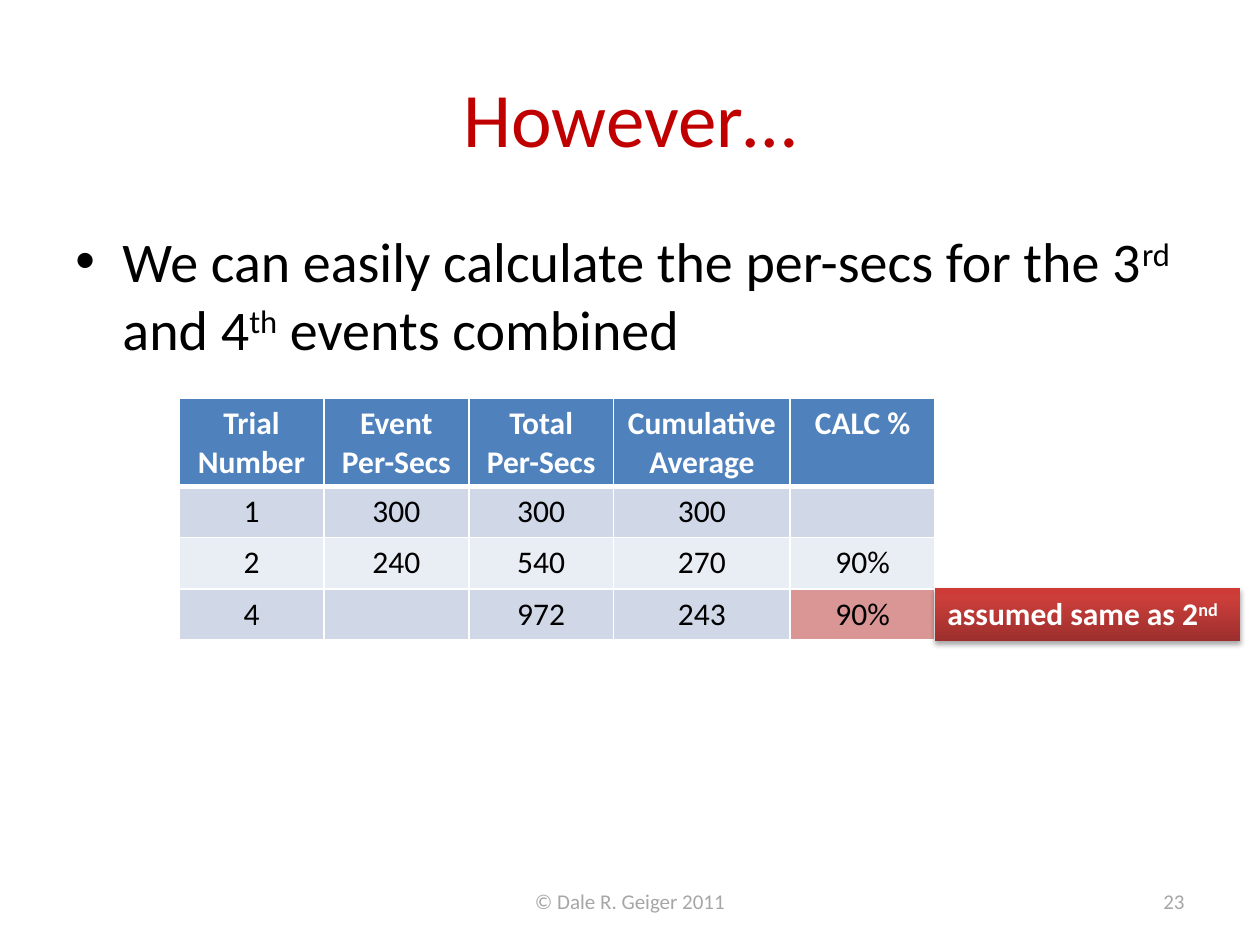
from copy import deepcopy

from lxml import etree
from pptx import Presentation
from pptx.dml.color import RGBColor
from pptx.enum.shapes import MSO_SHAPE
from pptx.enum.text import MSO_ANCHOR, MSO_AUTO_SIZE, PP_ALIGN
from pptx.oxml import parse_xml
from pptx.oxml.ns import nsdecls, qn
from pptx.util import Cm, Pt

LEFT, CENTER, RIGHT = PP_ALIGN.LEFT, PP_ALIGN.CENTER, PP_ALIGN.RIGHT
TOP, MIDDLE = MSO_ANCHOR.TOP, MSO_ANCHOR.MIDDLE
RECTANGLE = MSO_SHAPE.RECTANGLE
GROW = MSO_AUTO_SIZE.SHAPE_TO_FIT_TEXT

FONT = "Calibri"
BLACK = RGBColor(0x00, 0x00, 0x00)
WHITE = RGBColor(0xFF, 0xFF, 0xFF)
GRAY = RGBColor(0xA6, 0xA6, 0xA6)
TITLE_RED = RGBColor(0xC0, 0x00, 0x00)
HEADER_BLUE = RGBColor(0x4F, 0x81, 0xBD)
BAND_DARK = RGBColor(0xD0, 0xD8, 0xE8)
BAND_LIGHT = RGBColor(0xE9, 0xED, 0xF4)
HIGHLIGHT = RGBColor(0xD9, 0x96, 0x94)
GRADIENT = [
    (0, RGBColor(0x9C, 0x2F, 0x2D)),
    (0.8, RGBColor(0xCB, 0x3E, 0x3A)),
    (1, RGBColor(0xCE, 0x3B, 0x37)),
]

TRIALS = [
    ["Trial Number", "Event Per-Secs", "Total Per-Secs", "Cumulative Average", "CALC %"],
    ["1", "300", "300", "300", ""],
    ["2", "240", "540", "270", "90%"],
    ["4", "", "972", "243", "90%"],
]
COLUMN_WIDTHS = [2.92, 2.92, 2.92, 3.56, 2.92]
ROW_HEIGHT = 1.03
TABLE_HEIGHT = 4.88


def format_runs(paragraph, size, color, bold=False, align=LEFT):
    paragraph.alignment = align
    for run in paragraph.runs:
        run.font.name = FONT
        run.font.size = Pt(size)
        run.font.bold = bold
        run.font.color.rgb = color


def add_raised_runs(paragraph, pieces):
    """Add the pieces as runs, raising every second one as a superscript."""
    for index, piece in enumerate(pieces):
        run = paragraph.add_run()
        run.text = piece
        if index % 2:
            run.font._element.set("baseline", "30000")


def add_text_box(slide, box, anchor=TOP):
    """Add an empty wrapping text box and return its text frame."""
    text_frame = slide.shapes.add_textbox(*map(Cm, box)).text_frame
    text_frame.word_wrap = True
    text_frame.vertical_anchor = anchor
    return text_frame


def add_label(slide, box, text, size, color, align):
    text_frame = add_text_box(slide, box, MIDDLE)
    text_frame.text = text
    format_runs(text_frame.paragraphs[0], size, color, align=align)


def add_bullet(slide, box, pieces):
    paragraph = add_text_box(slide, box).paragraphs[0]
    add_raised_runs(paragraph, pieces)
    format_runs(paragraph, 32, BLACK)
    paragraph.space_before = Pt(6.4)
    properties = paragraph._p.get_or_add_pPr()
    properties.set("marL", str(Cm(0.95)))
    properties.set("indent", str(Cm(-0.95)))
    etree.SubElement(properties, qn("a:buFont")).set("typeface", "Arial")
    etree.SubElement(properties, qn("a:buChar")).set("char", "•")


def set_borders(cell, top=1, bottom=1):
    properties = cell._tc.get_or_add_tcPr()
    for side, width in (("L", 1), ("R", 1), ("T", top), ("B", bottom)):
        properties.append(parse_xml(
            f'<a:ln{side} {nsdecls("a")} w="{Pt(width)}"><a:solidFill>'
            f'<a:srgbClr val="{WHITE}"/></a:solidFill></a:ln{side}>'))


def add_trial_table(slide, left, top):
    frame = slide.shapes.add_table(
        len(TRIALS), len(COLUMN_WIDTHS), Cm(left), Cm(top),
        Cm(sum(COLUMN_WIDTHS)), Cm(TABLE_HEIGHT))
    table = frame.table
    for column, width in zip(table.columns, COLUMN_WIDTHS):
        column.width = Cm(width)
    for row_index, values in enumerate(TRIALS):
        table.rows[row_index].height = Cm(ROW_HEIGHT)
        is_header = row_index == 0
        band = BAND_DARK if row_index % 2 else BAND_LIGHT
        for column_index, value in enumerate(values):
            cell = table.cell(row_index, column_index)
            set_borders(cell, 3 if row_index == 1 else 1, 3 if is_header else 1)
            cell.fill.solid()
            cell.fill.fore_color.rgb = HEADER_BLUE if is_header else band
            cell.text = value
            format_runs(cell.text_frame.paragraphs[0], 18,
                        WHITE if is_header else BLACK, is_header, CENTER)
    table.cell(len(TRIALS) - 1, len(COLUMN_WIDTHS) - 1).fill.fore_color.rgb = HIGHLIGHT
    frame.height = Cm(TABLE_HEIGHT)


def fill_with_gradient(shape):
    shape.fill.gradient()
    shape.fill.gradient_angle = 90
    stop_list = shape._element.spPr.find(".//" + qn("a:gsLst"))
    stop_list.append(deepcopy(stop_list[-1]))
    for stop, (position, color) in zip(shape.fill.gradient_stops, GRADIENT):
        stop.position = position
        stop.color.rgb = color


def add_soft_shadow(shape):
    shape.shadow.inherit = False
    shape._element.spPr.find(qn("a:effectLst")).append(parse_xml(
        f'<a:outerShdw {nsdecls("a")} blurRad="{Pt(3.1)}" dist="{Pt(1.8)}" '
        'dir="5400000" rotWithShape="0"><a:srgbClr val="000000">'
        '<a:alpha val="35000"/></a:srgbClr></a:outerShdw>'))


def add_callout(slide, box, pieces):
    shape = slide.shapes.add_shape(RECTANGLE, *map(Cm, box))
    fill_with_gradient(shape)
    shape.line.fill.background()
    add_soft_shadow(shape)
    text_frame = shape.text_frame
    text_frame.word_wrap = True
    text_frame.auto_size = GROW
    text_frame.vertical_anchor = TOP
    paragraph = text_frame.paragraphs[0]
    add_raised_runs(paragraph, pieces)
    format_runs(paragraph, 18, WHITE, bold=True)


def main():
    presentation = Presentation()
    presentation.slide_width, presentation.slide_height = Cm(25.4), Cm(19.05)
    slide = presentation.slides.add_slide(presentation.slide_layouts[6])
    add_label(slide, (1.27, 0.76, 22.86, 3.18), "However…", 44, TITLE_RED, CENTER)
    add_bullet(slide, (1.27, 4.45, 22.86, 12.57), [
        "We can easily calculate the per-secs for the 3", "rd",
        " and 4", "th", " events combined"])
    add_label(slide, (8.68, 17.66, 8.04, 1.01), "© Dale R. Geiger 2011", 12, GRAY, CENTER)
    add_label(slide, (18.2, 17.66, 5.93, 1.01), "23", 12, GRAY, RIGHT)
    add_trial_table(slide, 3.61, 8.03)
    add_callout(slide, (18.85, 11.86, 6.15, 1.06), ["assumed same as 2", "nd"])
    presentation.save("out.pptx")


if __name__ == "__main__":
    main()
